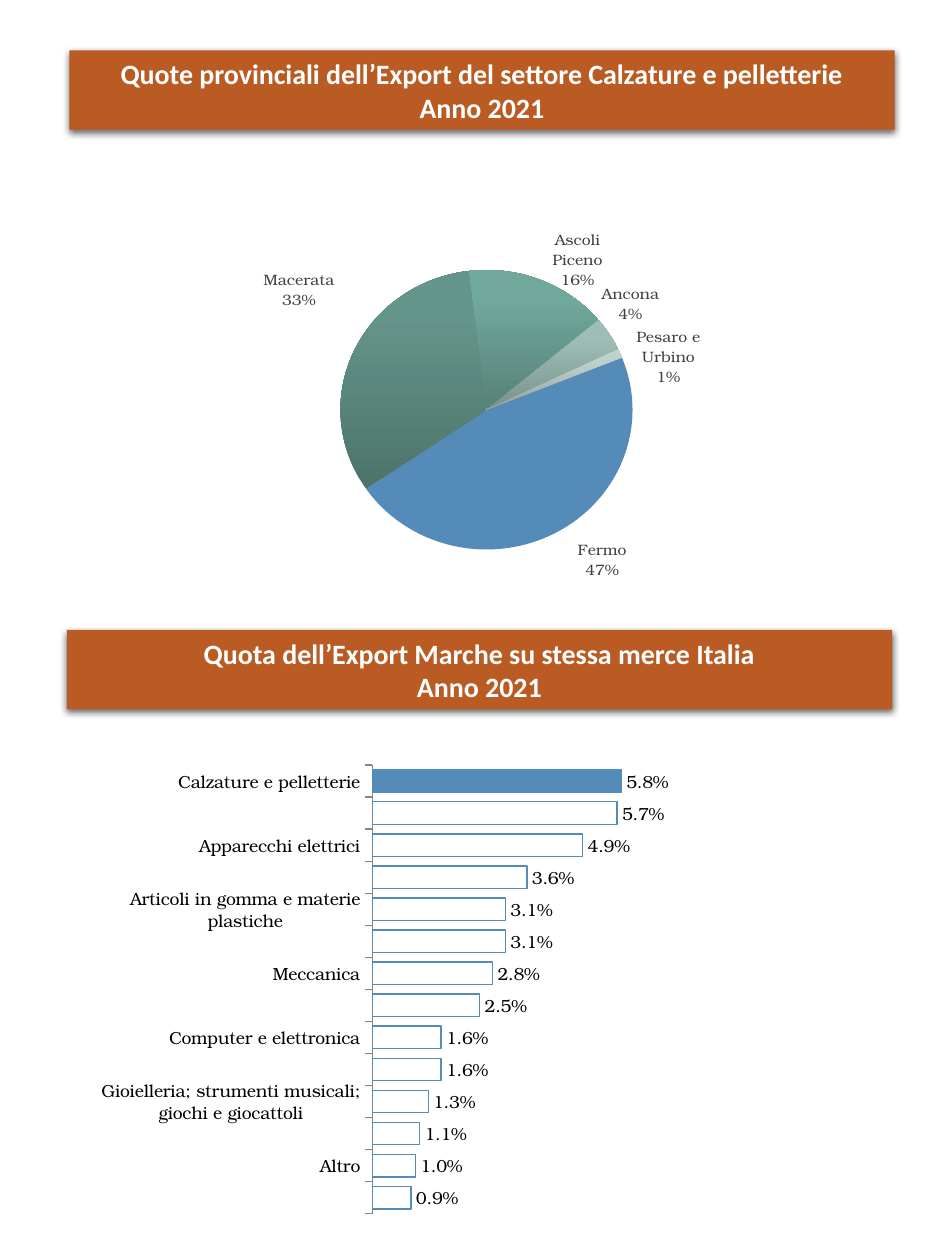
from copy import deepcopy

from lxml import etree
from pptx import Presentation
from pptx.chart.data import CategoryChartData
from pptx.dml.color import RGBColor
from pptx.enum import chart as ch, shapes, text
from pptx.oxml import parse_xml
from pptx.oxml.ns import nsdecls, qn
from pptx.util import Inches, Pt

BLUE, ORANGE, WHITE, BLACK = "558BB8", "B95B22", "FFFFFF", "000000"
CHART_FONT = "TeX Gyre Bonum"

SECTORS = [
    ("Calzature e pelletterie", 0.058),
    ("Mobili e prodotti in legno", 0.057),
    ("Apparecchi elettrici", 0.049),
    ("Carta e editoria", 0.036),
    ("Articoli in gomma e materie plastiche", 0.031),
    ("Prodotti chimici e farmaceutici", 0.031),
    ("Meccanica", 0.028),
    ("Metallurgia e prod in metallo", 0.025),
    ("Computer e elettronica", 0.016),
    ("Tessile e Abbigliamento", 0.016),
    ("Gioielleria; strumenti musicali; giochi e giocattoli", 0.013),
    ("Vetro, ceramiche, terracotta, cemento", 0.011),
    ("Altro", 0.01),
    ("Mezzi di trasporto", 0.009),
]
PROVINCES = [("Fermo", 47), ("Macerata", 33), ("Ascoli Piceno", 16),
             ("Ancona", 4), ("Pesaro e Urbino", 1)]
# Gradients of the slices after the first, dark to light
SLICE_GRADIENTS = [
    ("4D736A", "64958A", "64978B"),
    ("578278", "71A89C", "70AA9D"),
    ("79928C", "9DBEB6", "9DBFB7"),
    ("92A19D", "BED1CC", "BED2CD"),
]
# Label shifts by slice, as fractions of the chart size
LABEL_SHIFTS = [(0.04, 0), (-0.03, -0.11), (0.02, 0), (-0.03, -0.02),
                (0.02, 0.1)]


def color(value):
    return RGBColor.from_string(value)


def set_font(font, size, fill, name=CHART_FONT, bold=False):
    font.size, font.name, font.bold = Pt(size), name, bold
    font.color.rgb = color(fill)


def add_text(paragraph, content, align=text.PP_ALIGN.CENTER, **font):
    paragraph.alignment = align
    run = paragraph.add_run()
    run.text = content
    set_font(run.font, **font)


def add_banner(slide, left, top, lines):
    shape = slide.shapes.add_shape(shapes.MSO_SHAPE.RECTANGLE, Inches(left),
                                   Inches(top), Inches(6.55), Inches(0.63))
    shape.fill.solid()
    shape.fill.fore_color.rgb = color(ORANGE)
    shape.line.fill.background()
    # Soft shadow straight below
    shape.shadow.inherit = False
    effects = shape._element.spPr.find(qn("a:effectLst"))
    effects.append(parse_xml(
        f'<a:outerShdw {nsdecls("a")} blurRad="{Pt(4)}" dist="{Pt(1.5)}" '
        'dir="5400000" rotWithShape="0"><a:srgbClr val="000000">'
        '<a:alpha val="60000"/></a:srgbClr></a:outerShdw>'))
    frame = shape.text_frame
    frame.word_wrap = True
    frame.vertical_anchor = text.MSO_ANCHOR.MIDDLE
    for index, line in enumerate(lines):
        paragraph = frame.add_paragraph() if index else frame.paragraphs[0]
        add_text(paragraph, line, size=16, fill=WHITE, name="Calibri", bold=True)


def add_chart(slide, kind, rows, box, plot_box):
    data = CategoryChartData()
    data.categories = [name for name, _ in rows]
    data.add_series("Series 1", [value for _, value in rows])
    chart = slide.shapes.add_chart(kind, *map(Inches, box), data).chart
    chart.has_title = chart.has_legend = False
    set_font(chart.font, 10, BLACK)
    # Fixed inner plot area
    area = chart._chartSpace.chart.plotArea
    for old in area.findall(qn("c:layout")):
        area.remove(old)
    parts = "".join(f'<c:{tag} val="{value}"/>'
                    for tag, value in zip("xywh", plot_box))
    area.insert(0, parse_xml(
        f'<c:layout {nsdecls("c")}><c:manualLayout><c:layoutTarget val="inner"/>'
        '<c:xMode val="edge"/><c:yMode val="edge"/>'
        f'{parts}</c:manualLayout></c:layout>'))
    return chart


def add_labels(series, number_format, size, fill):
    labels = series.data_labels
    labels.number_format = number_format
    labels.number_format_is_linked = False
    labels.position = ch.XL_LABEL_POSITION.OUTSIDE_END
    set_font(labels.font, size, fill)
    return labels


def fill_gradient(fill, colors):
    fill.gradient()
    fill.gradient_angle = 90
    first = fill.gradient_stops[0]._gs
    first.addnext(deepcopy(first))
    for stop, position, value in zip(fill.gradient_stops, (0, 0.8, 1), colors):
        stop.position = position
        stop.color.rgb = color(value)


def shift_labels(labels, shifts):
    """Give each label its offset; the rest of the format is shared."""
    shared = labels._element
    kept = ("numFmt", "spPr", "txPr", "dLblPos", "showLegendKey", "showVal",
            "showCatName", "showSerName", "showPercent", "showBubbleSize",
            "separator")
    format_parts = [part for part in shared
                    if etree.QName(part).localname in kept]
    for index, (x, y) in enumerate(shifts):
        label = parse_xml(
            f'<c:dLbl {nsdecls("c")}><c:idx val="{index}"/><c:layout>'
            f'<c:manualLayout><c:x val="{x}"/><c:y val="{y}"/>'
            '</c:manualLayout></c:layout></c:dLbl>')
        label.extend(deepcopy(part) for part in format_parts)
        shared.insert(index, label)
    # No leader lines
    for old in shared.findall(qn("c:showLeaderLines")):
        shared.remove(old)
    shared.append(parse_xml(f'<c:showLeaderLines {nsdecls("c")} val="0"/>'))


def add_sector_bars(slide):
    chart = add_chart(slide, ch.XL_CHART_TYPE.BAR_CLUSTERED, SECTORS,
                      (0.53, 5.87, 5.23, 3.97), (0.464, 0.051, 0.456, 0.897))
    plot = chart.plots[0]
    plot.vary_by_categories = False
    plot.gap_width, plot.overlap = 42, 4
    # Axes
    axis = chart.category_axis
    axis.reverse_order = True
    axis.major_tick_mark = ch.XL_TICK_MARK.OUTSIDE
    axis.format.line.color.rgb = color("868686")
    set_font(axis.tick_labels.font, 10, BLACK)
    values = chart.value_axis
    values.visible = values.has_major_gridlines = False
    values.minimum_scale, values.maximum_scale = 0, 0.07
    # White bars, the first one highlighted
    series = plot.series[0]
    series.invert_if_negative = False
    for item, fill in ((series, WHITE), (series.points[0], BLUE)):
        item.format.fill.solid()
        item.format.fill.fore_color.rgb = color(fill)
        item.format.line.color.rgb = color(BLUE)
        item.format.line.width = Pt(0.75)
    add_labels(series, "0.0%", 10, BLACK).show_value = True


def add_province_pie(slide):
    chart = add_chart(slide, ch.XL_CHART_TYPE.PIE, PROVINCES,
                      (2.09, 1.69, 3.71, 3), (0.165, 0.113, 0.625, 0.773))
    plot = chart.plots[0]
    plot.vary_by_categories = True
    plot._element.append(parse_xml(
        f'<c:firstSliceAng {nsdecls("c")} val="68"/>'))
    # Slices
    series = plot.series[0]
    first = series.points[0].format
    first.fill.solid()
    first.fill.fore_color.rgb = color(BLUE)
    first.line.fill.background()
    for index, colors in enumerate(SLICE_GRADIENTS, 1):
        point = series.points[index].format
        fill_gradient(point.fill, colors)
        point.line.fill.background()
    # Province and share on separate lines
    labels = add_labels(series, "0%", 9, "404040")
    labels.show_value = False
    labels.show_category_name = labels.show_percentage = True
    separator = parse_xml(f'<c:separator {nsdecls("c")}>\n</c:separator>')
    flags = [part for part in labels._element
             if etree.QName(part).localname in ("showPercent", "showBubbleSize")]
    flags[-1].addnext(separator)
    shift_labels(labels, LABEL_SHIFTS)


def main():
    presentation = Presentation()
    presentation.slide_width, presentation.slide_height = Inches(7.5), Inches(10)
    slide = presentation.slides.add_slide(presentation.slide_layouts[6])
    # Lower half: sectors
    add_banner(slide, 0.53, 5, ["Quota dell’Export Marche su stessa merce Italia",
                                "Anno 2021"])
    add_sector_bars(slide)
    # Upper half: provinces
    add_province_pie(slide)
    add_banner(slide, 0.55, 0.4, [
        "Quote provinciali dell’Export del settore Calzature e pelletterie",
        "Anno 2021"])
    presentation.save("out.pptx")


if __name__ == "__main__":
    main()
